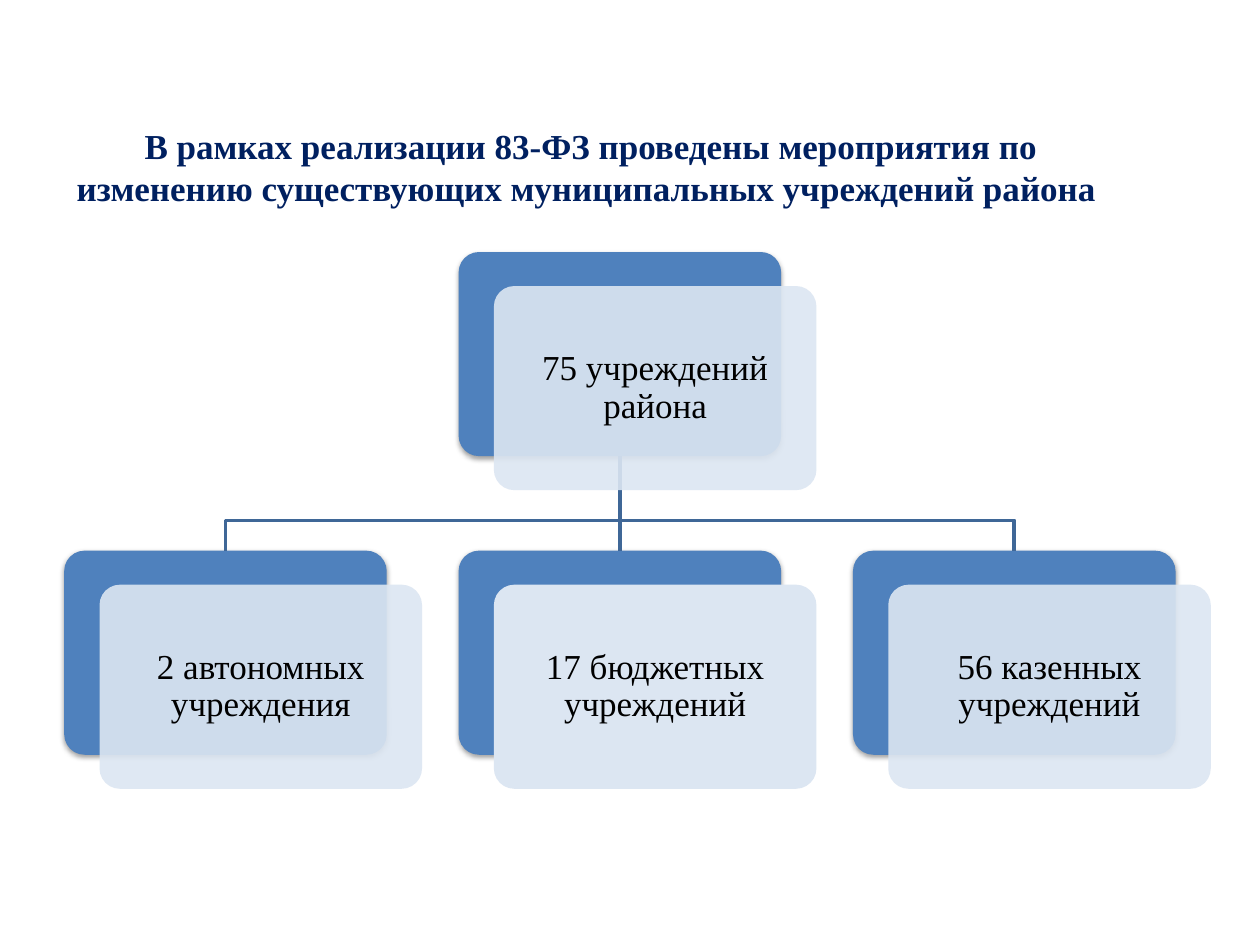
from lxml.etree import SubElement
from pptx import Presentation
from pptx.dml.color import RGBColor
from pptx.enum.shapes import MSO_CONNECTOR, MSO_SHAPE
from pptx.enum.text import MSO_ANCHOR, PP_ALIGN
from pptx.oxml import parse_xml
from pptx.oxml.ns import nsdecls, qn
from pptx.util import Inches, Pt

COLORS = {
    "title": "002060",
    "box": "4F81BD",
    "card": "DCE6F2",
    "line": "3F6797",
    "text": "000000",
}
FONT = "Times New Roman"
BOX_W, BOX_H = 2.56, 1.62
LEFT, STEP = 0.51, 3.13
ROOT_TOP, CHILD_TOP, BRANCH_Y = 2, 4.37, 4.13
CARD_DX, CARD_DY = 0.28, 0.27
SHADOW = (
    f'<a:effectLst {nsdecls("a")}><a:outerShdw blurRad="40000" dist="20000" '
    'dir="5400000" rotWithShape="0"><a:srgbClr val="000000">'
    '<a:alpha val="38000"/></a:srgbClr></a:outerShdw></a:effectLst>'
)

# text, column, top, card opacity in percent
NODES = [
    ("75 учреждений района", 1, ROOT_TOP, 90),
    ("2 автономных учреждения", 0, CHILD_TOP, 90),
    ("17 бюджетных учреждений", 1, CHILD_TOP, 100),
    ("56 казенных учреждений", 2, CHILD_TOP, 90),
]


def color(name):
    return RGBColor.from_string(COLORS[name])


def add_round_box(s, left, top, fill):
    sp = s.shapes.add_shape(MSO_SHAPE.ROUNDED_RECTANGLE, Inches(left), Inches(top),
                            Inches(BOX_W), Inches(BOX_H))
    sp.adjustments[0] = 0.1
    sp.fill.solid()
    sp.fill.fore_color.rgb = color(fill)
    sp.line.fill.background()
    sp.shadow.inherit = False
    return sp


prs = Presentation()
prs.slide_width, prs.slide_height = Inches(10), Inches(7.5)
s = prs.slides.add_slide(prs.slide_layouts[5])

title = s.shapes.title
title.left, title.top = Inches(0.47), Inches(0.94)
title.width, title.height = Inches(8.44), Inches(0.77)
tf = title.text_frame
tf.word_wrap = True
tf.vertical_anchor = MSO_ANCHOR.MIDDLE
p = tf.paragraphs[0]
p.text = ("В рамках реализации 83-ФЗ проведены мероприятия по "
          "изменению существующих муниципальных учреждений района ")
p.alignment = PP_ALIGN.CENTER
p.font.name, p.font.size, p.font.bold = FONT, Pt(20), True
p.font.color.rgb = color("title")

# Back boxes
boxes = []
for text, column, top, opacity in NODES:
    sp = add_round_box(s, LEFT + column * STEP, top, "box")
    effects = sp._element.spPr.find(qn("a:effectLst"))
    effects.getparent().replace(effects, parse_xml(SHADOW))
    boxes.append(sp)

# Branches from the root to the three children
root, left_child, middle_child, right_child = boxes
trunk = s.shapes.add_connector(MSO_CONNECTOR.STRAIGHT, 0, 0, 0, 0)
trunk.begin_connect(root, 2)
trunk.end_connect(middle_child, 0)
SubElement(trunk._element.spPr, qn("a:effectLst"))
branches = [trunk]
root_x = root.left + root.width // 2
for child in (left_child, right_child):
    child_x = child.left + child.width // 2
    builder = s.shapes.build_freeform(root_x, root.top + root.height)
    builder.add_line_segments([(root_x, Inches(BRANCH_Y)), (child_x, Inches(BRANCH_Y)),
                               (child_x, child.top)], close=False)
    elbow = builder.convert_to_shape()
    elbow.fill.background()
    elbow.shadow.inherit = False
    branches.append(elbow)
for branch in branches:
    branch.line.color.rgb = color("line")
    branch.line.width = Pt(2)

# Front cards with the text
for text, column, top, opacity in NODES:
    sp = add_round_box(s, LEFT + column * STEP + CARD_DX, top + CARD_DY, "card")
    if opacity < 100:
        rgb = sp._element.spPr.find(qn("a:solidFill")).find(qn("a:srgbClr"))
        SubElement(rgb, qn("a:alpha"), val=str(opacity * 1000))
    tf = sp.text_frame
    tf.word_wrap = True
    tf.vertical_anchor = MSO_ANCHOR.MIDDLE
    tf.margin_left = tf.margin_right = Inches(0.13)
    tf.margin_top = tf.margin_bottom = Inches(0.13)
    p = tf.paragraphs[0]
    p.text = text
    p.alignment = PP_ALIGN.CENTER
    p.line_spacing = 0.9
    p.font.name, p.font.size = FONT, Pt(20)
    p.font.color.rgb = color("text")

prs.save("out.pptx")
